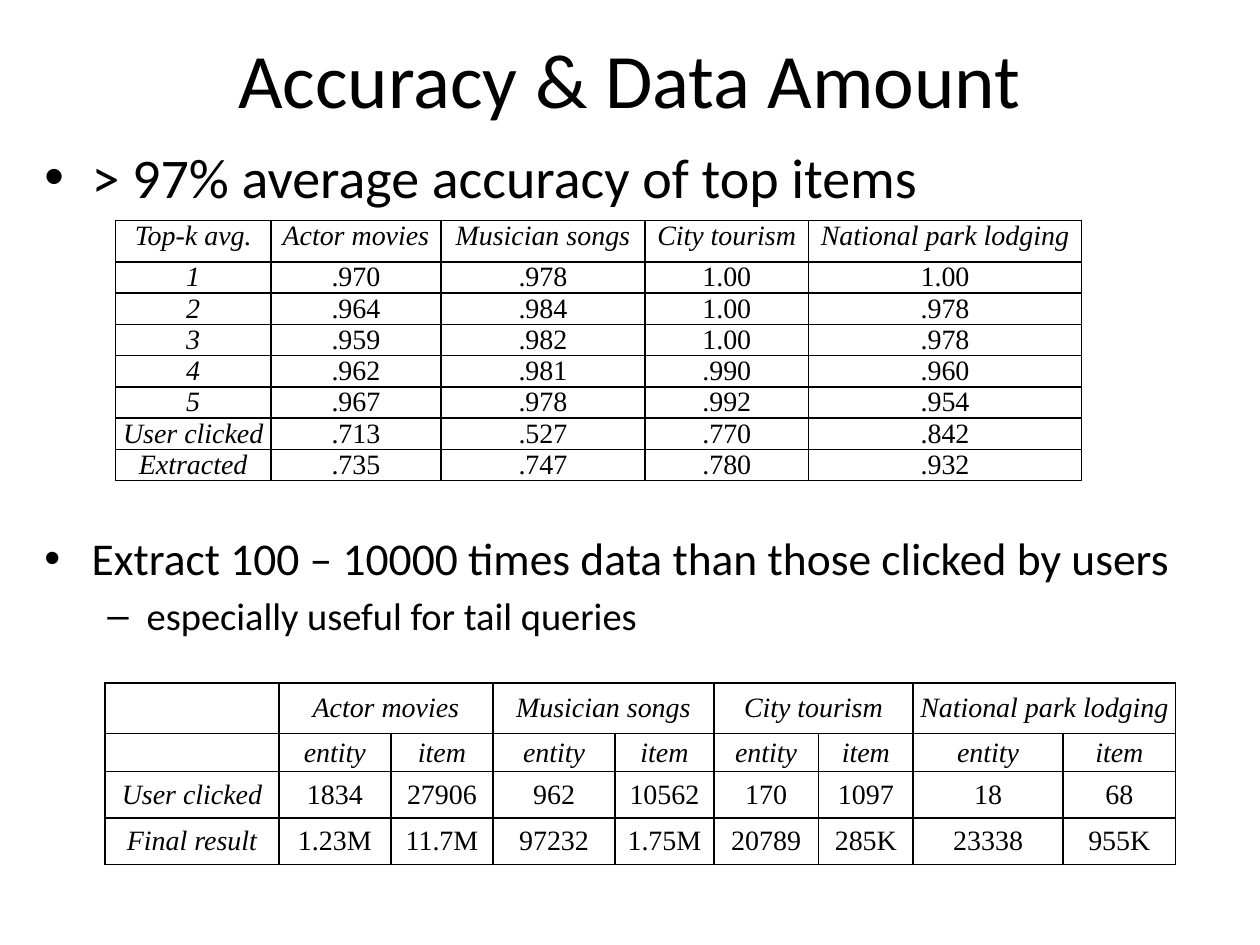
from lxml.etree import SubElement
from pptx import Presentation
from pptx.dml.color import RGBColor
from pptx.enum.text import MSO_ANCHOR, MSO_AUTO_SIZE, PP_ALIGN
from pptx.oxml.ns import qn
from pptx.util import Cm, Pt

BLACK = RGBColor(0x00, 0x00, 0x00)
BODY_FONT = "Calibri"
TABLE_FONT = "Times New Roman"

ACCURACY_ROWS = [
    ["Top-k avg.", "Actor movies", "Musician songs", "City tourism", "National park lodging"],
    ["1", ".970", ".978", "1.00", "1.00"],
    ["2", ".964", ".984", "1.00", ".978"],
    ["3", ".959", ".982", "1.00", ".978"],
    ["4", ".962", ".981", ".990", ".960"],
    ["5", ".967", ".978", ".992", ".954"],
    ["User clicked", ".713", ".527", ".770", ".842"],
    ["Extracted", ".735", ".747", ".780", ".932"],
]
AMOUNT_ROWS = [
    ["", "Actor movies", "", "Musician songs", "", "City tourism", "", "National park lodging", ""],
    [""] + ["entity", "item"] * 4,
    ["User clicked", "1834", "27906", "962", "10562", "170", "1097", "18", "68"],
    ["Final result", "1.23M", "11.7M", "97232", "1.75M", "20789", "285K", "23338", "955K"],
]


def add_text(para, text, size, font=BODY_FONT, italic=False):
    """Add a formatted span of text to a paragraph."""
    span = para.add_run()
    span.text = text
    span.font.name = font
    span.font.size = Pt(size)
    span.font.italic = italic
    span.font.color.rgb = BLACK


def place(shape, box):
    """Move a placeholder to a box of left, top, width and height in cm."""
    shape.left, shape.top, shape.width, shape.height = map(Cm, box)
    shape.text_frame.auto_size = MSO_AUTO_SIZE.NONE


def fill_title(shape, box, text):
    """Place the slide title."""
    place(shape, box)
    shape.text_frame.vertical_anchor = MSO_ANCHOR.MIDDLE
    para = shape.text_frame.paragraphs[0]
    para.alignment = PP_ALIGN.CENTER
    add_text(para, text, 44)


def fill_list(shape, box, items):
    """Place the list; each item is text, size, level and space before."""
    place(shape, box)
    frame = shape.text_frame
    for index, (text, size, level, space) in enumerate(items):
        para = frame.add_paragraph() if index else frame.paragraphs[0]
        para.level = level
        para.space_before = Pt(space)
        add_text(para, text, size)


def add_borders(cell, width=1):
    """Draw a solid line on all four sides of a cell."""
    properties = cell._tc.get_or_add_tcPr()
    for side in ("lnL", "lnR", "lnT", "lnB"):
        line = SubElement(properties, qn(f"a:{side}"), w=str(Pt(width)))
        fill = SubElement(line, qn("a:solidFill"))
        SubElement(fill, qn("a:srgbClr"), val=str(BLACK))


def format_cell(cell, text, italic, anchor):
    """Write one centred table cell without margins."""
    cell.margin_left = cell.margin_right = cell.margin_top = cell.margin_bottom = 0
    cell.vertical_anchor = anchor
    add_borders(cell)
    cell.fill.background()
    para = cell.text_frame.paragraphs[0]
    para.alignment = PP_ALIGN.CENTER
    add_text(para, text, 16, font=TABLE_FONT, italic=italic)


def add_grid(page, left, top, widths, heights, rows, header_rows, anchor):
    """Add a ruled table with italic headers and return it."""
    frame = page.shapes.add_table(len(rows), len(widths), Cm(left), Cm(top),
                                  Cm(sum(widths)), Cm(sum(heights)))
    table = frame.table
    table.first_row = table.horz_banding = False
    for column, width in zip(table.columns, widths):
        column.width = Cm(width)
    for row, height in zip(table.rows, heights):
        row.height = Cm(height)
    for i, values in enumerate(rows):
        for j, text in enumerate(values):
            format_cell(table.cell(i, j), text, i < header_rows or j == 0, anchor)
    return table


def build_page(deck):
    """Build the slide on accuracy and data amount."""
    page = deck.slides.add_slide(deck.slide_layouts[1])
    fill_title(page.shapes.title, (0, 0.2, 25.4, 2.75), "Accuracy & Data Amount")
    fill_list(page.placeholders[1], (0.64, 2.75, 24.33, 10.59), [
        ("> 97% average accuracy of top items", 32, 0, 6.4),
        ("Extract 100 – 10000 times data than those clicked by users", 26, 0, 183),
        ("especially useful for tail queries", 22, 1, 4.4),
    ])
    add_grid(page, 2.33, 4.44, [3.13, 3.43, 4.11, 3.3, 5.5], [0.84] + [0.63] * 7,
             ACCURACY_ROWS, 1, MSO_ANCHOR.TOP)
    amounts = add_grid(page, 2.12, 13.77,
                       [3.5, 2.26, 2.06, 2.46, 1.99, 2.11, 1.91, 3.02, 2.27],
                       [1.02, 0.76, 0.94, 0.94], AMOUNT_ROWS, 2, MSO_ANCHOR.MIDDLE)
    for column in range(1, 9, 2):
        amounts.cell(0, column).merge(amounts.cell(0, column + 1))


def main():
    """Create the deck and save it."""
    deck = Presentation()
    deck.slide_width, deck.slide_height = Cm(25.4), Cm(19.05)
    build_page(deck)
    deck.save("out.pptx")


if __name__ == "__main__":
    main()
